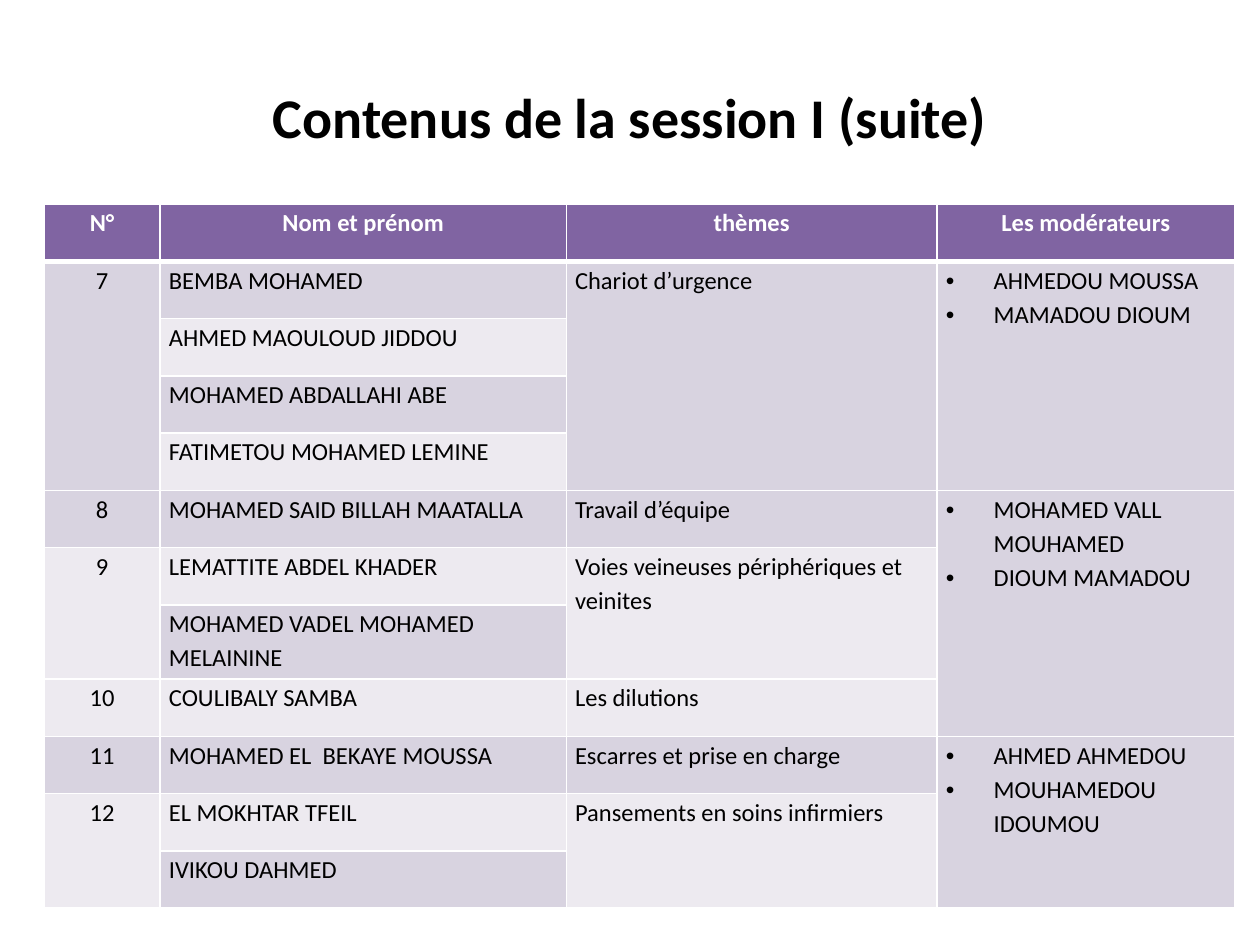
from dataclasses import dataclass

import pptx
import pptx.dml.color
import pptx.enum.text
import pptx.oxml
import pptx.oxml.ns
import pptx.util
from lxml import etree

Inches = pptx.util.Inches
Pt = pptx.util.Pt
Align = pptx.enum.text.PP_ALIGN
Anchor = pptx.enum.text.MSO_ANCHOR


@dataclass(frozen=True)
class Theme:
    font: str = "Calibri"
    title_size: int = 32
    table_size: int = 14
    text: str = "000000"
    white: str = "FFFFFF"
    header: str = "8064A2"
    dark_band: str = "D8D3E0"
    light_band: str = "EDEAF0"
    line_spacing: float = 1.15


THEME = Theme()

HEADINGS = ["N°", "Nom et prénom", "thèmes", "Les modérateurs"]
TALKS = [
    ("7", "Chariot d’urgence", ["BEMBA MOHAMED", "AHMED MAOULOUD JIDDOU",
                                "MOHAMED ABDALLAHI ABE", "FATIMETOU MOHAMED LEMINE"]),
    ("8", "Travail d’équipe", ["MOHAMED SAID BILLAH MAATALLA"]),
    ("9", "Voies veineuses périphériques et veinites",
     ["LEMATTITE ABDEL KHADER", "MOHAMED VADEL MOHAMED MELAININE"]),
    ("10", "Les dilutions", ["COULIBALY SAMBA"]),
    ("11", "Escarres et prise en charge", ["MOHAMED EL  BEKAYE MOUSSA"]),
    ("12", "Pansements en soins infirmiers", ["EL MOKHTAR TFEIL", "IVIKOU DAHMED"]),
]
MODERATORS = [
    (4, ["AHMEDOU MOUSSA", "MAMADOU DIOUM"]),
    (4, ["MOHAMED VALL MOUHAMED", "DIOUM MAMADOU"]),
    (3, ["AHMED AHMEDOU", "MOUHAMEDOU IDOUMOU"]),
]
COLUMN_WIDTHS = [0.92, 3.22, 2.94, 2.36]
TALL_ROW, TALL_HEIGHT = 7, 0.59


def color(value):
    return pptx.dml.color.RGBColor.from_string(value)


def add_span(para, text, size, ink, bold):
    span = para.add_run()
    span.text = text
    span.font.name = THEME.font
    span.font.size = Pt(size)
    span.font.bold = bold
    span.font.color.rgb = color(ink)


def add_bullet(para):
    properties = para._p.get_or_add_pPr()
    properties.set("marL", str(Inches(0.38)))
    properties.set("indent", str(Inches(-0.38)))
    for tag, name, value in (("a:buFont", "typeface", "Arial"), ("a:buChar", "char", "•")):
        etree.SubElement(properties, pptx.oxml.ns.qn(tag)).set(name, value)


def write_cell(cell, lines, align=Align.LEFT, ink=THEME.text, bold=False, bullets=False):
    frame = cell.text_frame
    for index, line in enumerate(lines):
        para = frame.add_paragraph() if index else frame.paragraphs[0]
        para.alignment = align
        para.line_spacing = THEME.line_spacing
        if bullets:
            add_bullet(para)
        add_span(para, line, THEME.table_size, ink, bold)


def style_cell(cell, row):
    cell.margin_left = cell.margin_right = Inches(0.07)
    cell.margin_top = cell.margin_bottom = 0
    cell.vertical_anchor = Anchor.TOP
    widths = {"L": 1, "R": 1, "T": 3 if row == 1 else 1, "B": 3 if row == 0 else 1}
    properties = cell._tc.get_or_add_tcPr()
    for side, width in widths.items():
        properties.append(pptx.oxml.parse_xml(
            f'<a:ln{side} {pptx.oxml.ns.nsdecls("a")} w="{Pt(width)}"><a:solidFill>'
            f'<a:srgbClr val="{THEME.white}"/></a:solidFill></a:ln{side}>'))
    band = THEME.dark_band if row % 2 else THEME.light_band
    cell.fill.solid()
    cell.fill.fore_color.rgb = color(band if row else THEME.header)


def merge_down(table, row, column, count):
    cell = table.cell(row, column)
    if count > 1:
        cell.merge(table.cell(row + count - 1, column))
    return cell


def add_title(page, left, top, width, height):
    box = page.shapes.add_textbox(left, top, width, height)
    frame = box.text_frame
    frame.word_wrap = True
    frame.vertical_anchor = Anchor.MIDDLE
    para = frame.paragraphs[0]
    para.alignment = Align.CENTER
    add_span(para, "Contenus de la session I (suite)", THEME.title_size, THEME.text, True)


def add_programme(page, left, top, width, height):
    row_count = 1 + sum(len(names) for _, _, names in TALKS)
    table = page.shapes.add_table(
        row_count, len(HEADINGS), left, top, width, height).table
    for column, share in zip(table.columns, COLUMN_WIDTHS):
        column.width = int(width * share / sum(COLUMN_WIDTHS))
    regular_height = (height - Inches(TALL_HEIGHT)) // (row_count - 1)
    for index, row in enumerate(table.rows):
        row.height = Inches(TALL_HEIGHT) if index == TALL_ROW else regular_height
        for cell in row.cells:
            style_cell(cell, index)

    for column, heading in enumerate(HEADINGS):
        write_cell(table.cell(0, column), [heading], Align.CENTER, THEME.white, True)

    row = 1
    for number, theme, names in TALKS:
        write_cell(merge_down(table, row, 0, len(names)), [number], Align.CENTER)
        write_cell(merge_down(table, row, 2, len(names)), [theme])
        for offset, name in enumerate(names):
            write_cell(table.cell(row + offset, 1), [name])
        row += len(names)

    row = 1
    for count, names in MODERATORS:
        write_cell(merge_down(table, row, 3, count), names, bullets=True)
        row += count


def main():
    deck = pptx.Presentation()
    deck.slide_width, deck.slide_height = Inches(10), Inches(7.5)
    page = deck.slides.add_slide(deck.slide_layouts[6])
    add_title(page, Inches(0.5), Inches(0.3), Inches(9), Inches(1.25))
    add_programme(page, Inches(0.35), Inches(1.62), Inches(9.45), Inches(5.59))
    deck.save("out.pptx")


if __name__ == "__main__":
    main()
